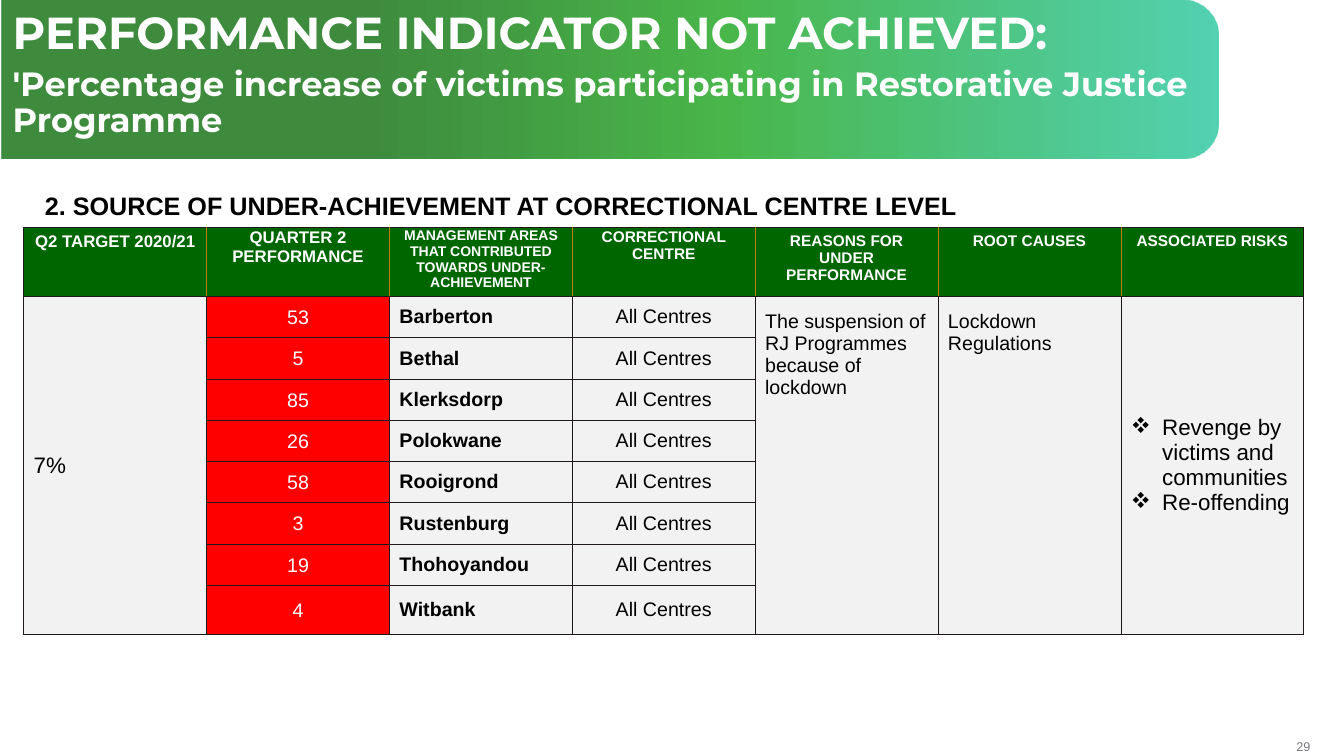
from lxml import etree
from pptx import Presentation
from pptx.dml.color import RGBColor
from pptx.enum import shapes, text
from pptx.oxml import parse_xml
from pptx.oxml.ns import nsdecls, qn
from pptx.util import Cm, Pt

WHITE = RGBColor(0xFF, 0xFF, 0xFF)
BLACK = RGBColor(0, 0, 0)
GREY = RGBColor(0x77, 0x78, 0x7B)
PALE = RGBColor(0xF2, 0xF2, 0xF2)
RED = RGBColor(0xFF, 0, 0)
GREEN = RGBColor(0, 0x66, 0)
BRIGHT_GREEN = RGBColor(0, 0x99, 0)
TEAL = RGBColor(0, 0xBC, 0x8D)
DARK = RGBColor(0x1E, 0x19, 0x18)
ORANGE = RGBColor(0xBF, 0x7B, 0x17)

LEFT, CENTER, RIGHT = text.PP_ALIGN.LEFT, text.PP_ALIGN.CENTER, text.PP_ALIGN.RIGHT
TOP, MIDDLE = text.MSO_ANCHOR.TOP, text.MSO_ANCHOR.MIDDLE
NORMAL_MARGINS = (0.25, 0.13, 0.25, 0.13)
TIGHT_MARGINS = (0.03, 0.03, 0.03, 0)
LOWERED_MARGINS = (0.25, 0.36, 0.25, 0.13)

HEADERS = [
    ("Q2 TARGET 2020/21", 12, NORMAL_MARGINS),
    ("QUARTER 2\nPERFORMANCE", 12, TIGHT_MARGINS),
    ("MANAGEMENT AREAS THAT CONTRIBUTED TOWARDS UNDER-ACHIEVEMENT", 10, TIGHT_MARGINS),
    ("CORRECTIONAL CENTRE", 11, TIGHT_MARGINS),
    ("REASONS FOR UNDER\nPERFORMANCE", 11, NORMAL_MARGINS),
    ("ROOT CAUSES", 11, NORMAL_MARGINS),
    ("ASSOCIATED RISKS", 11, NORMAL_MARGINS),
]
AREAS = [("53", "Barberton"), ("5", "Bethal"), ("85", "Klerksdorp"), ("26", "Polokwane"),
         ("58", "Rooigrond"), ("3", "Rustenburg"), ("19", "Thohoyandou"), ("4", "Witbank")]
# column, wording, size, anchor, margins
MERGED = [
    (0, "7%", 16, MIDDLE, NORMAL_MARGINS),
    (4, "The suspension of RJ Programmes because of lockdown", 14, TOP, LOWERED_MARGINS),
    (5, "Lockdown Regulations", 14, TOP, LOWERED_MARGINS),
    (6, "Revenge by victims and communities\nRe-offending", 16, MIDDLE, NORMAL_MARGINS),
]


def write(tf, wording, size, color, bold=False, align=LEFT, font="Arial"):
    tf.text = wording
    tf.word_wrap = True
    for p in tf.paragraphs:
        p.alignment = align
        for r in p.runs:
            r.font.name, r.font.size, r.font.bold = font, Pt(size), bold
            r.font.color.rgb = color


def set_margins(box, margins):
    box.margin_left, box.margin_top, box.margin_right, box.margin_bottom = map(Cm, margins)


def fill_gradient(sp, stops, angle):
    """Fill with (position %, colour, opacity %) stops."""
    sp.fill.background()
    gs = "".join(f'<a:gs pos="{pos * 1000}"><a:srgbClr val="{color}">'
                 f'<a:alpha val="{alpha * 1000}"/></a:srgbClr></a:gs>'
                 for pos, color, alpha in stops)
    grad = parse_xml(f'<a:gradFill {nsdecls("a")} rotWithShape="1"><a:gsLst>{gs}</a:gsLst>'
                     f'<a:lin ang="{angle * 60000}" scaled="0"/></a:gradFill>')
    spPr = sp._element.spPr
    spPr.replace(spPr.find(qn("a:noFill")), grad)


def set_borders(cell, sides):
    """Draw half-point borders; sides maps L, R, T and B to colours."""
    tcPr = cell._tc.get_or_add_tcPr()
    for i, side in enumerate("LRTB"):
        tcPr.insert(i, parse_xml(
            f'<a:ln{side} {nsdecls("a")} w="6350"><a:solidFill>'
            f'<a:srgbClr val="{sides[side]}"/></a:solidFill></a:ln{side}>'))


def add_bullet(p):
    pPr = p._p.get_or_add_pPr()
    pPr.set("marL", str(Cm(0.79)))
    pPr.set("indent", str(-Cm(0.79)))
    etree.SubElement(pPr, qn("a:buFont")).set("typeface", "Wingdings")
    etree.SubElement(pPr, qn("a:buChar")).set("char", "v")


def add_text(slide, left, top, width, height, *args, **kwargs):
    box = slide.shapes.add_textbox(Cm(left), Cm(top), Cm(width), Cm(height))
    write(box.text_frame, *args, **kwargs)
    return box.text_frame


def add_banner(slide, left, top, width, height):
    # The shape is turned a quarter, so its frame is upright around the same centre.
    sp = slide.shapes.add_shape(
        shapes.MSO_SHAPE.ROUND_2_SAME_RECTANGLE,
        Cm(left + (width - height) / 2), Cm(top + (height - width) / 2),
        Cm(height), Cm(width))
    sp.rotation = 90
    sp.adjustments[0] = 0.233
    sp.shadow.inherit = False
    sp.line.fill.background()
    fill_gradient(sp, [(30, GREEN, 75), (59, BRIGHT_GREEN, 71), (100, TEAL, 67)], 270)

    tf = add_text(
        slide, left + 0.04, top + 0.14, width - 0.25, 1.45,
        "PERFORMANCE INDICATOR NOT ACHIEVED:\n"
        "'Percentage increase of victims participating in Restorative Justice Programme",
        24, WHITE, bold=True, font="Montserrat")
    tf.paragraphs[0].runs[0].font.size = Pt(32)
    for p in tf.paragraphs:
        p.line_spacing = 0.9
        p.space_after = Pt(6)


def fill_cell(cell, wording, size, color, fill, margins=NORMAL_MARGINS, anchor=MIDDLE, **style):
    write(cell.text_frame, wording, size, color, **style)
    set_margins(cell, margins)
    cell.vertical_anchor = anchor
    cell.fill.solid()
    cell.fill.fore_color.rgb = fill


def add_centre_table(slide, left, top, width):
    heights = [1.75] + [1.04] * (len(AREAS) - 1) + [1.24]
    table = slide.shapes.add_table(len(heights), len(HEADERS), Cm(left), Cm(top),
                                   Cm(width), Cm(sum(heights))).table
    table.first_row = table.horz_banding = False
    for col in table.columns:
        col.width = Cm(width / len(HEADERS))
    for row, height in zip(table.rows, heights):
        row.height = Cm(height)

    for c, (wording, size, margins) in enumerate(HEADERS):
        fill_cell(table.cell(0, c), wording, size, WHITE, GREEN, margins, TOP,
                  bold=True, align=CENTER)
    for r, (performance, area) in enumerate(AREAS, 1):
        fill_cell(table.cell(r, 1), performance, 14, WHITE, RED, TIGHT_MARGINS, align=CENTER)
        fill_cell(table.cell(r, 2), area, 14, BLACK, PALE, bold=True)
        fill_cell(table.cell(r, 3), "All Centres", 14, BLACK, PALE, align=CENTER)
    for c, wording, size, anchor, margins in MERGED:
        cell = table.cell(1, c)
        cell.merge(table.cell(len(AREAS), c))
        fill_cell(cell, wording, size, BLACK, PALE, margins, anchor)
    for p in table.cell(1, 6).text_frame.paragraphs:
        add_bullet(p)

    last = len(HEADERS) - 1
    for r in range(len(heights)):
        for c in range(len(HEADERS)):
            sides = dict.fromkeys("LRTB", DARK)
            if r == 0 and c > 0:
                sides["L"] = ORANGE
            if r == 0 and c < last:
                sides["R"] = ORANGE
            set_borders(table.cell(r, c), sides)


def add_page_number(slide, left, top, width, height):
    tf = add_text(slide, left, top, width, height, "29", 9, GREY, align=RIGHT)
    set_margins(tf, (0, 0, 0, 0))
    tf.vertical_anchor = MIDDLE


def main():
    prs = Presentation()
    prs.slide_width, prs.slide_height = Cm(33.87), Cm(19.05)
    slide = prs.slides.add_slide(prs.slide_layouts[6])
    add_page_number(slide, 32.03, 18.62, 0.99, 0.38)
    add_banner(slide, 0.03, 0, 30.68, 4)
    add_text(slide, 0.88, 4.67, 24.52, 1.02,
             "2. SOURCE OF UNDER-ACHIEVEMENT AT CORRECTIONAL CENTRE LEVEL",
             18, BLACK, bold=True)
    add_centre_table(slide, 0.6, 5.72, 32.26)
    prs.save("out.pptx")


if __name__ == "__main__":
    main()
